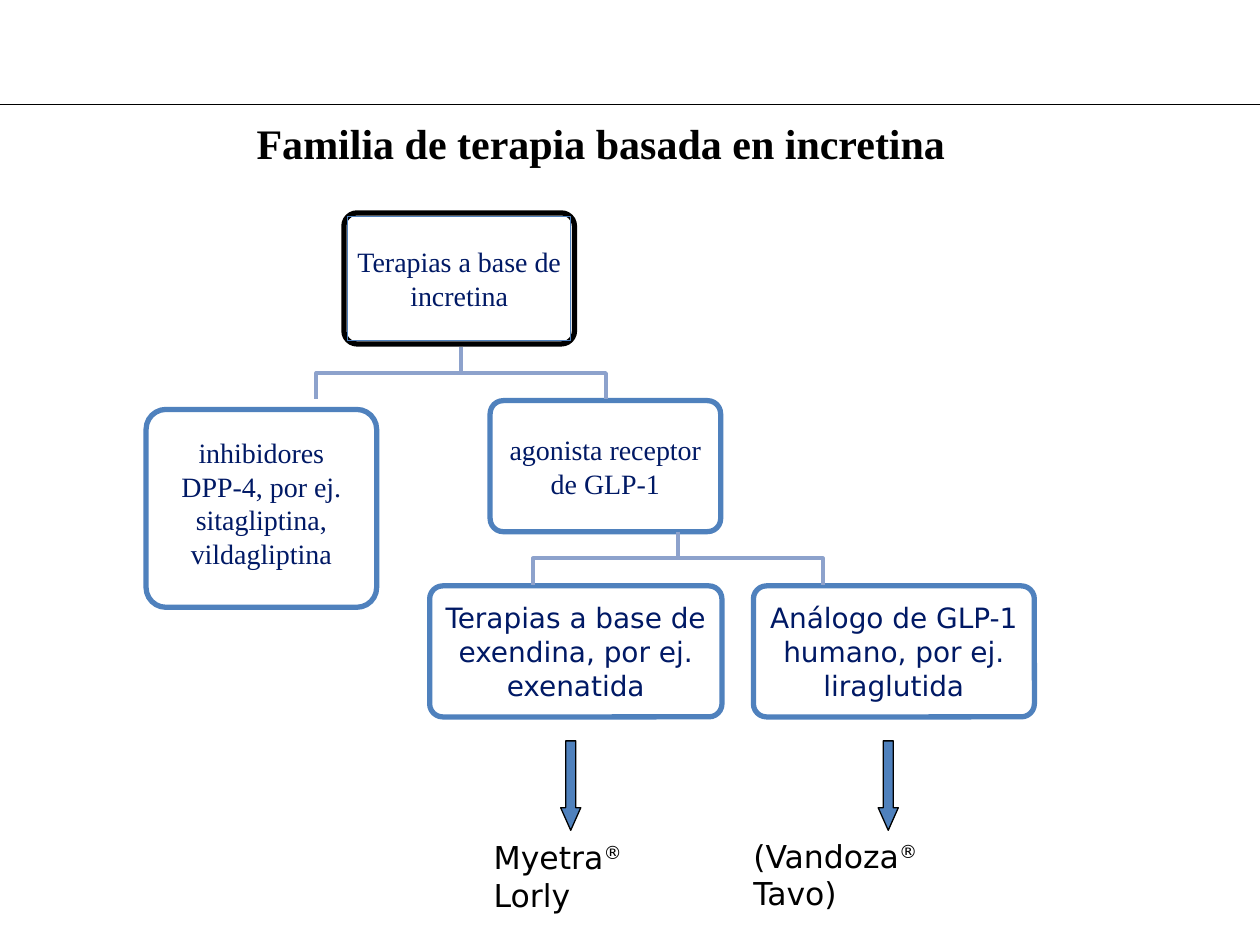
import pptx
import pptx.util
import pptx.dml.color
import pptx.enum.shapes
import pptx.enum.text
import pptx.oxml
import pptx.oxml.ns

Inches = pptx.util.Inches
Shape = pptx.enum.shapes.MSO_SHAPE
Align = pptx.enum.text.PP_ALIGN
Anchor = pptx.enum.text.MSO_ANCHOR

SERIF, SANS = "Times New Roman", "DejaVu Sans"
BLUE, NAVY, PALE = "4F81BD", "001965", "8DA2CC"
BLACK, WHITE = "000000", "FFFFFF"


def color(value):
    return pptx.dml.color.RGBColor.from_string(value)


def style_shape(shape, fill, line, width):
    shape.shadow.inherit = False
    if fill:
        shape.fill.solid()
        shape.fill.fore_color.rgb = color(fill)
    else:
        shape.fill.background()
    shape.line.color.rgb = color(line)
    shape.line.width = pptx.util.Pt(width)


def add_span(para, text, font, size, value, bold=False, raised=False):
    span = para.add_run()
    span.text = text
    span.font.name = font
    span.font.size = pptx.util.Pt(size)
    span.font.color.rgb = color(value)
    span.font.bold = bold
    if raised:
        span._r.get_or_add_rPr().set("baseline", "30000")


def write_label(shape, lines, font, lift=0):
    """Centre the lines in the shape, moved up by half of lift."""
    frame = shape.text_frame
    frame.word_wrap = True
    frame.vertical_anchor = Anchor.MIDDLE
    frame.margin_left = frame.margin_right = frame.margin_top = Inches(0.07)
    frame.margin_bottom = Inches(0.07 + lift)
    for index, line in enumerate(lines):
        para = frame.add_paragraph() if index else frame.paragraphs[0]
        para.alignment = Align.CENTER
        add_span(para, line, font, 16, NAVY)


def add_box(page, left, top, width, height, line=BLUE):
    box = page.shapes.add_shape(Shape.ROUNDED_RECTANGLE, Inches(left),
                                Inches(top), Inches(width), Inches(height))
    box.adjustments[0] = 0.1
    style_shape(box, WHITE, line, 3)
    return box


def add_branch(page, center, top, direction):
    """Draw a stepped line from a parent down to one child."""
    child, middle, bottom = center + direction * 1.15, top + 0.21, top + 0.42
    builder = page.shapes.build_freeform(Inches(center), Inches(top))
    points = [(center, middle), (child, middle), (child, bottom)]
    builder.add_line_segments([(Inches(x), Inches(y)) for x, y in points],
                              close=False)
    style_shape(builder.convert_to_shape(), None, PALE, 2)


def add_down_arrow(page, left):
    arrow = page.shapes.add_shape(Shape.DOWN_ARROW, Inches(left), Inches(5.88),
                                  Inches(0.16), Inches(0.71))
    arrow.adjustments[0] = 0.5
    arrow.adjustments[1] = 1.121
    style_shape(arrow, BLUE, BLACK, 0.75)


def add_caption(page, left, top, width, product, maker):
    caption = page.shapes.add_textbox(Inches(left), Inches(top),
                                      Inches(width), Inches(0.4))
    caption.text_frame.word_wrap = False
    para = caption.text_frame.paragraphs[0]
    add_span(para, product, SANS, 18, BLACK)
    add_span(para, "® ", SANS, 18, BLACK, raised=True)
    add_span(para, maker, SANS, 18, BLACK)


def add_title(page, text):
    title = page.shapes.title
    title.left, title.top = Inches(1.91), Inches(0.88)
    title.width, title.height = Inches(5.72), Inches(0.5)
    frame = title.text_frame
    frame.word_wrap = False
    frame.auto_size = pptx.enum.text.MSO_AUTO_SIZE.NONE
    frame.vertical_anchor = Anchor.MIDDLE
    para = frame.paragraphs[0]
    para.alignment = Align.CENTER
    add_span(para, text, SERIF, 24, BLACK, bold=True)


def add_header_rule(page):
    rule = page.shapes.add_connector(pptx.enum.shapes.MSO_CONNECTOR.STRAIGHT,
                                     0, Inches(0.83), Inches(10), Inches(0.83))
    rule.line.color.rgb = color(BLACK)
    rule.line.width = pptx.util.Pt(0.75)
    rule._element.spPr.append(pptx.oxml.parse_xml(
        "<a:effectLst %s/>" % pptx.oxml.ns.nsdecls("a")))


def main():
    deck = pptx.Presentation()
    deck.slide_width, deck.slide_height = Inches(10), Inches(7.5)
    page = deck.slides.add_slide(deck.slide_layouts[5])

    # Header
    add_header_rule(page)
    add_title(page, "Familia de terapia basada en incretina")

    # Root of the tree: a black box with a thin inner frame
    add_box(page, 2.73, 1.69, 1.83, 1.04, BLACK)
    inner = page.shapes.add_shape(Shape.RECTANGLE, Inches(2.76), Inches(1.72),
                                  Inches(1.77), Inches(0.98))
    style_shape(inner, None, BLUE, 0.75)
    write_label(inner, ["Terapias a base de", "incretina"], SERIF)

    # Second level
    inhibitors = add_box(page, 1.16, 3.25, 1.83, 1.57)
    write_label(inhibitors,
                ["inhibidores DPP-4, por ej. sitagliptina, vildagliptina"],
                SERIF, lift=0.09)
    agonist = add_box(page, 3.89, 3.18, 1.83, 1.04)
    write_label(agonist, ["agonista receptor de GLP-1"], SERIF)

    # Third level
    exendin = add_box(page, 3.41, 4.65, 2.32, 1.04)
    write_label(exendin, ["Terapias a base de", "exendina, por ej. exenatida"],
                SANS)
    analogue = add_box(page, 5.98, 4.65, 2.23, 1.04)
    write_label(analogue, ["Análogo de GLP-1", "humano, por ej. liraglutida"],
                SANS)

    # Branches between the levels
    for center, top in [(3.66, 2.75), (5.38, 4.22)]:
        for direction in (-1, 1):
            add_branch(page, center, top, direction)

    # Marketed products
    for left in (4.45, 6.97):
        add_down_arrow(page, left)
    add_caption(page, 3.82, 6.6, 1.74, "Myetra", "Lorly")
    add_caption(page, 5.88, 6.59, 2.19, "(Vandoza", "Tavo)")

    deck.save("out.pptx")


if __name__ == "__main__":
    main()
